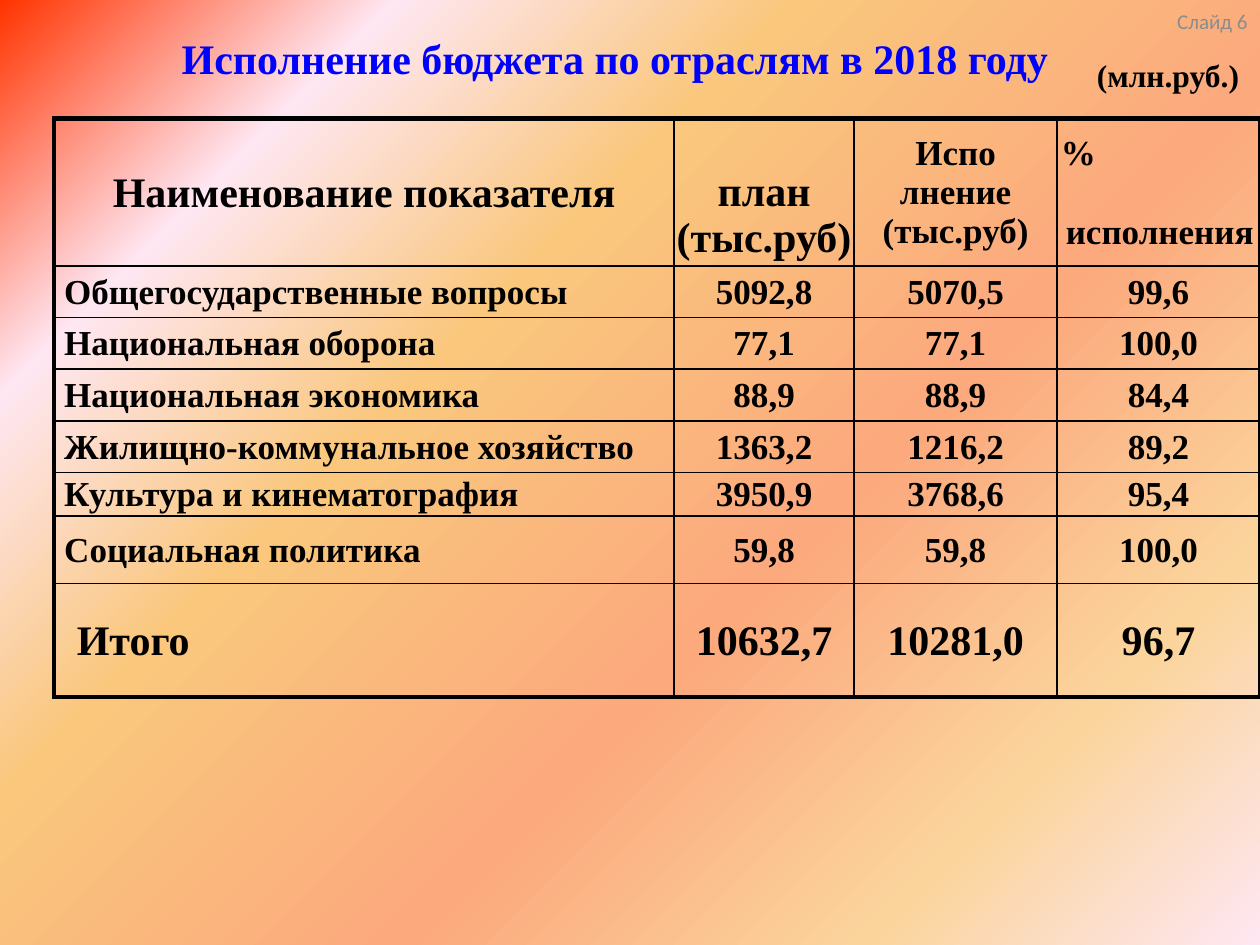
import dataclasses

import pptx
import pptx.dml.color
import pptx.enum.text
import pptx.oxml
import pptx.oxml.ns
import pptx.util

Inches = pptx.util.Inches
Pt = pptx.util.Pt
Align = pptx.enum.text.PP_ALIGN
Anchor = pptx.enum.text.MSO_ANCHOR


@dataclasses.dataclass(frozen=True)
class Theme:
    serif: str = "Times New Roman"
    sans: str = "Calibri"
    ink: str = "000000"
    title: str = "0000FF"
    muted: str = "8C8C8C"
    large: int = 24
    medium: int = 20
    unit: int = 18
    small: int = 12
    thick: float = 3
    thin: float = 1
    hairline: float = 0.5
    backdrop: tuple = (
        (0, "FF3300"), (18, "FEE7F2"), (36, "FAC77D"),
        (61, "FBA97D"), (82, "FBD49C"), (100, "FEE7F2"),
    )


THEME = Theme()

HEADERS = (
    ("Наименование показателя", THEME.large),
    ("план (тыс.руб)", THEME.large),
    ("Испо\nлнение\n(тыс.руб)", THEME.medium),
    ("%\nисполнения", THEME.medium),
)
SECTORS = (
    ("Общегосударственные вопросы", "5092,8", "5070,5", "99,6"),
    ("Национальная оборона", "77,1", "77,1", "100,0"),
    ("Национальная экономика", "88,9", "88,9", "84,4"),
    ("Жилищно-коммунальное хозяйство", "1363,2", "1216,2", "89,2"),
    ("Культура и кинематография", "3950,9", "3768,6", "95,4"),
    ("Социальная политика", "59,8", "59,8", "100,0"),
)
TOTAL = ("Итого", "10632,7", "10281,0", "96,7")
COLUMN_WIDTHS = (4.92, 1.43, 1.61, 1.61)
ROW_HEIGHTS = (1.11, 0.41, 0.41, 0.41, 0.41, 0.34, 0.54, 0.9)


def format_text(frame, size, color=THEME.ink, font=THEME.serif, bold=True, align=Align.CENTER):
    for paragraph in frame.paragraphs:
        paragraph.alignment = align
        for span in paragraph.runs:
            span.font.name = font
            span.font.size = Pt(size)
            span.font.bold = bold
            span.font.color.rgb = pptx.dml.color.RGBColor.from_string(color)


def paint_background(page):
    fill = page.background.fill
    fill.gradient()
    fill.gradient_angle = 315
    stops = page.element.find(".//" + pptx.oxml.ns.qn("a:gsLst"))
    for stop in list(stops):
        stops.remove(stop)
    for position, color in THEME.backdrop:
        stops.append(pptx.oxml.parse_xml(
            f'<a:gs {pptx.oxml.ns.nsdecls("a")} pos="{position * 1000}">'
            f'<a:srgbClr val="{color}"/></a:gs>'
        ))


def add_title(page, text):
    box = page.shapes.title
    box.left, box.top, box.width, box.height = map(Inches, (0, 0.21, 9.76, 0.52))
    frame = box.text_frame
    frame.text = text
    frame.word_wrap = False
    frame.auto_size = pptx.enum.text.MSO_AUTO_SIZE.NONE
    frame.vertical_anchor = Anchor.TOP
    format_text(frame, THEME.large, THEME.title)


def add_label(page, text, place, anchor, size, **style):
    box = page.shapes.add_textbox(*map(Inches, place))
    frame = box.text_frame
    frame.text = text
    frame.word_wrap = True
    frame.vertical_anchor = anchor
    format_text(frame, size, **style)


def draw_borders(cell, left, right, top, bottom):
    properties = cell._tc.get_or_add_tcPr()
    sides = {"lnL": left, "lnR": right, "lnT": top, "lnB": bottom}
    for index, (side, width) in enumerate(sides.items()):
        properties.insert(index, pptx.oxml.parse_xml(
            f'<a:{side} {pptx.oxml.ns.nsdecls("a")} w="{Pt(width)}">'
            f'<a:solidFill><a:srgbClr val="{THEME.ink}"/></a:solidFill></a:{side}>'
        ))


def fill_cell(cell, text, size, align=Align.CENTER, indent=0.01):
    cell.fill.background()
    cell.vertical_anchor = Anchor.MIDDLE
    cell.margin_left = Inches(indent)
    cell.margin_right = cell.margin_top = Inches(0.01)
    cell.margin_bottom = 0
    cell.text_frame.text = text
    format_text(cell.text_frame, size, align=align)


def adjust_headers(plan, percent):
    plan.margin_top = Inches(0.37)
    percent.margin_left = Inches(0.03)
    sign, word = percent.text_frame.paragraphs
    sign.alignment = Align.LEFT
    word.space_before = Pt(23)


def add_budget_table(page):
    row_count, column_count = len(ROW_HEIGHTS), len(COLUMN_WIDTHS)
    place = (0.43, 0.94, sum(COLUMN_WIDTHS), sum(ROW_HEIGHTS))
    table = page.shapes.add_table(row_count, column_count, *map(Inches, place)).table
    table.first_row = table.horz_banding = False
    for column, width in zip(table.columns, COLUMN_WIDTHS):
        column.width = Inches(width)
    for row, height in zip(table.rows, ROW_HEIGHTS):
        row.height = Inches(height)

    for index, (text, size) in enumerate(HEADERS):
        fill_cell(table.cell(0, index), text, size)
    adjust_headers(table.cell(0, 1), table.cell(0, 3))

    for row, values in enumerate(SECTORS + (TOTAL,), start=1):
        is_total = values is TOTAL
        size = THEME.large if is_total else THEME.medium
        name, *amounts = values
        fill_cell(table.cell(row, 0), name, size, Align.LEFT, 0.18 if is_total else 0.08)
        for column, amount in enumerate(amounts, start=1):
            fill_cell(table.cell(row, column), amount, size)

    inner_lines = [THEME.thin] * (row_count - 2) + [THEME.hairline]
    row_lines = [THEME.thick, *inner_lines, THEME.thick]
    column_lines = [THEME.thick] + [THEME.thin] * (column_count - 1) + [THEME.thick]
    for row in range(row_count):
        for column in range(column_count):
            draw_borders(
                table.cell(row, column),
                *column_lines[column:column + 2],
                *row_lines[row:row + 2],
            )


def main():
    deck = pptx.Presentation()
    deck.slide_width, deck.slide_height = Inches(10), Inches(7.5)
    page = deck.slides.add_slide(deck.slide_layouts[5])
    paint_background(page)
    add_title(page, "Исполнение бюджета по отраслям в 2018 году")
    add_label(page, "Слайд 6", (9.02, 0, 0.98, 0.34), Anchor.MIDDLE, THEME.small,
              color=THEME.muted, font=THEME.sans, bold=False, align=Align.RIGHT)
    add_label(page, "(млн.руб.)", (8.54, 0.36, 1.46, 0.47), Anchor.MIDDLE, THEME.unit)
    add_budget_table(page)
    deck.save("out.pptx")


if __name__ == "__main__":
    main()
